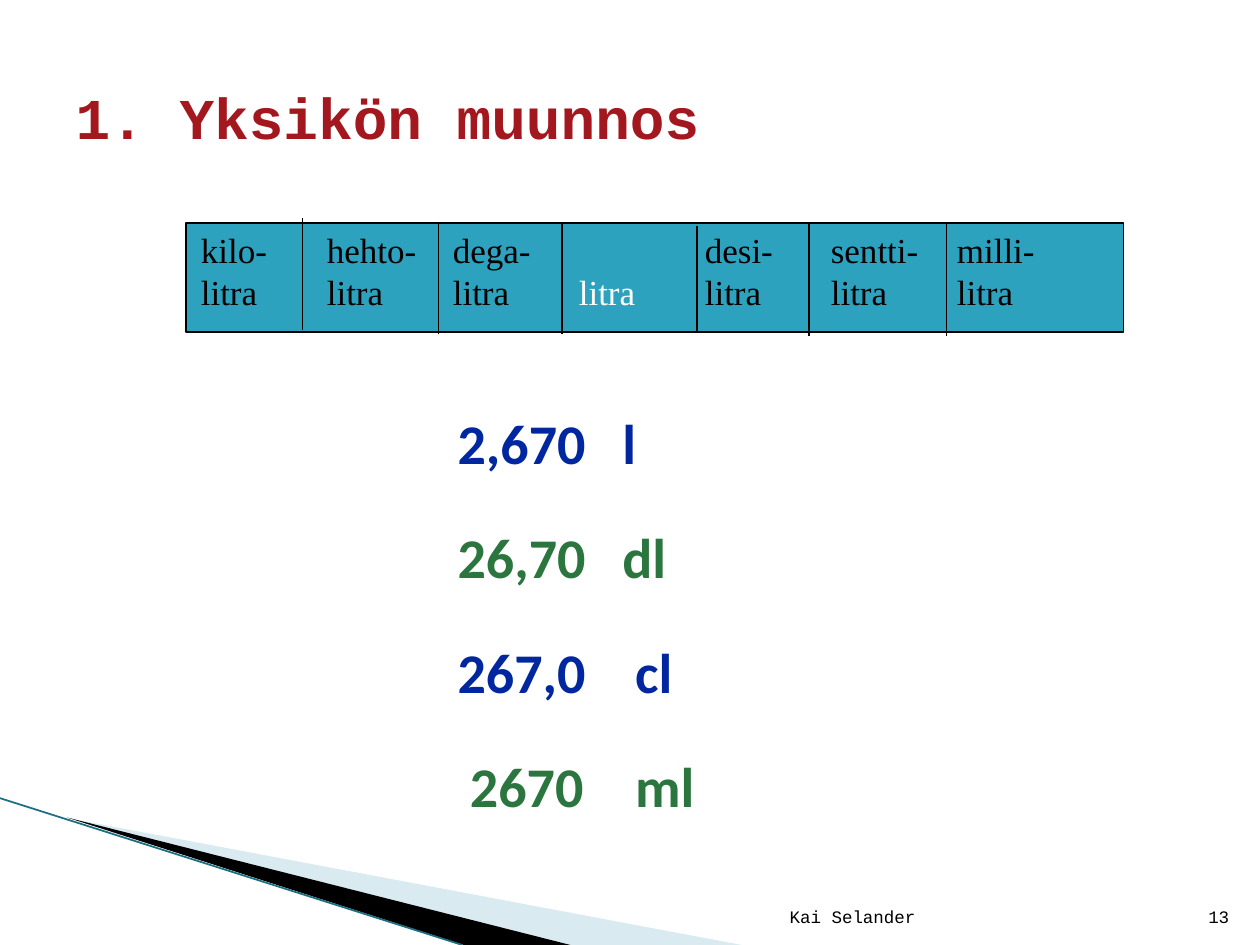
"""Build a slide on converting litres into smaller units."""
from lxml import etree
from pptx import Presentation
from pptx import util as u
from pptx.dml.color import RGBColor
from pptx.enum import shapes, text
from pptx.oxml import ns

TITLE = "1. Yksikön muunnos"
BLACK, WHITE, BLUE, GREEN = "000000", "FFFFFF", "00279F", "2B753E"
SCALE_ROWS = [
    [("kilo-\thehto-\tdega-\t\tdesi-\tsentti-\tmilli-", BLACK)],
    [("litra\tlitra\tlitra\t", BLACK), ("litra\t", WHITE), ("litra\tlitra\tlitra", BLACK)],
]
SCALE_STEP = 2.54
DIVIDERS = [
    (6.1, 4.39, 6.65), (8.84, 4.47, 6.73), (11.33, 4.52, 6.73),
    (14.05, 4.55, 6.68), (16.31, 4.52, 6.78), (19.08, 4.52, 6.78),
]
CONVERSIONS = [
    ("2,670", "l", BLUE, 6.1, 9.42),
    ("26,70", "dl", GREEN, 6.1, 9.42),
    ("267,0", "cl", BLUE, 6.1, 9.68),
    ("2670", "ml", GREEN, 6.35, 9.68),
]
BANDS = [
    ([(1.4, 16.5), (14.95, 19.05), (11.5, 19.05)], "A0CBDC", 40),
    ([(1.35, 16.48), (11.5, 19.05), (9.35, 19.05)], BLACK, 100),
]
FOOTERS = [("Kai Selander", 12.17, 6.53), ("13", 24.01, 1.02)]


def color(target, value):
    target.rgb = RGBColor.from_string(value)


def element(parent, tag, **attributes):
    return etree.SubElement(parent, ns.qn(tag), attributes)


def place(shape, left, top, width, height):
    shape.left, shape.top, shape.width, shape.height = map(u.Cm, (left, top, width, height))


def add_run(paragraph, words, font_name, size, value, bold=False):
    run = paragraph.add_run()
    run.text = words
    run.font.name, run.font.size, run.font.bold = font_name, u.Pt(size), bold
    color(run.font.color, value)


def add_line(slide, start, end, value, width=1):
    line = slide.shapes.add_connector(
        shapes.MSO_CONNECTOR.STRAIGHT, *map(u.Cm, (*start, *end)))
    color(line.line.color, value)
    line.line.width = u.Pt(width)
    element(line._element.spPr, "a:effectLst")


def add_bands(slide):
    for points, value, opacity in BANDS:
        corners = [(u.Cm(x), u.Cm(y)) for x, y in points]
        builder = slide.shapes.build_freeform(*corners[0])
        builder.add_line_segments(corners[1:], close=True)
        band = builder.convert_to_shape()
        band.shadow.inherit = False
        band.fill.solid()
        color(band.fill.fore_color, value)
        band.line.fill.background()
        if opacity < 100:
            fill = band._element.spPr.find(".//" + ns.qn("a:srgbClr"))
            element(fill, "a:alpha", val=str(opacity * 1000))
    add_line(slide, (0, 16.09), (9.32, 19.05), "1A6F82")


def add_scale(slide):
    bar = slide.shapes.add_shape(
        shapes.MSO_SHAPE.RECTANGLE, *map(u.Cm, (3.75, 4.49, 18.9, 2.21)))
    bar.shadow.inherit = False
    bar.fill.solid()
    color(bar.fill.fore_color, "2DA2BF")
    color(bar.line.color, BLACK)
    bar.line.width = u.Pt(1)
    frame = slide.shapes.add_textbox(*map(u.Cm, (3.8, 4.49, 18.6, 2.2))).text_frame
    frame.word_wrap = True
    for index, row in enumerate(SCALE_ROWS):
        paragraph = frame.add_paragraph() if index else frame.paragraphs[0]
        properties = paragraph._p.get_or_add_pPr()
        properties.set("defTabSz", str(int(u.Cm(SCALE_STEP))))
        tabs = element(properties, "a:tabLst")
        for step in range(1, 7):
            element(tabs, "a:tab", pos=str(int(u.Cm(SCALE_STEP * step))), algn="l")
        for words, value in row:
            add_run(paragraph, words, "Times New Roman", 20, value)
    for x, top, bottom in DIVIDERS:
        add_line(slide, (x, top), (x, bottom), BLACK)


def fill_conversions(body):
    place(body, 2.87, 7.16, 21.59, 5.31)
    frame = body.text_frame
    frame.auto_size = text.MSO_AUTO_SIZE.NONE
    for index, (number, unit, value, number_left, unit_left) in enumerate(CONVERSIONS):
        paragraph = frame.add_paragraph() if index else frame.paragraphs[0]
        properties = paragraph._p.get_or_add_pPr()
        properties.set("marL", str(int(u.Cm(unit_left))))
        properties.set("indent", str(int(u.Cm(number_left - unit_left))))
        element(properties, "a:buNone")
        paragraph.line_spacing = 1.7
        paragraph.space_before = u.Pt(0)
        add_run(paragraph, f"{number}\t{unit}", "Calibri", 32, value, True)


def fill_title(title):
    place(title, 1.27, 0.76, 22.86, 3.18)
    title.text_frame.vertical_anchor = text.MSO_ANCHOR.MIDDLE
    paragraph = title.text_frame.paragraphs[0]
    paragraph.alignment = text.PP_ALIGN.LEFT
    add_run(paragraph, TITLE, "Courier New", 33, "A3171E", True)


def add_footers(slide):
    for words, left, width in FOOTERS:
        frame = slide.shapes.add_textbox(*map(u.Cm, (left, 17.79, width, 1.02))).text_frame
        frame.word_wrap = True
        frame.vertical_anchor = text.MSO_ANCHOR.BOTTOM
        frame.paragraphs[0].alignment = text.PP_ALIGN.RIGHT
        add_run(frame.paragraphs[0], words, "Courier New", 10, BLACK)


def main():
    presentation = Presentation()
    presentation.slide_width, presentation.slide_height = u.Cm(25.4), u.Cm(19.05)
    slide = presentation.slides.add_slide(presentation.slide_layouts[1])
    add_bands(slide)
    fill_conversions(slide.placeholders[1])
    add_scale(slide)
    fill_title(slide.shapes.title)
    add_footers(slide)
    presentation.save("out.pptx")


if __name__ == "__main__":
    main()
